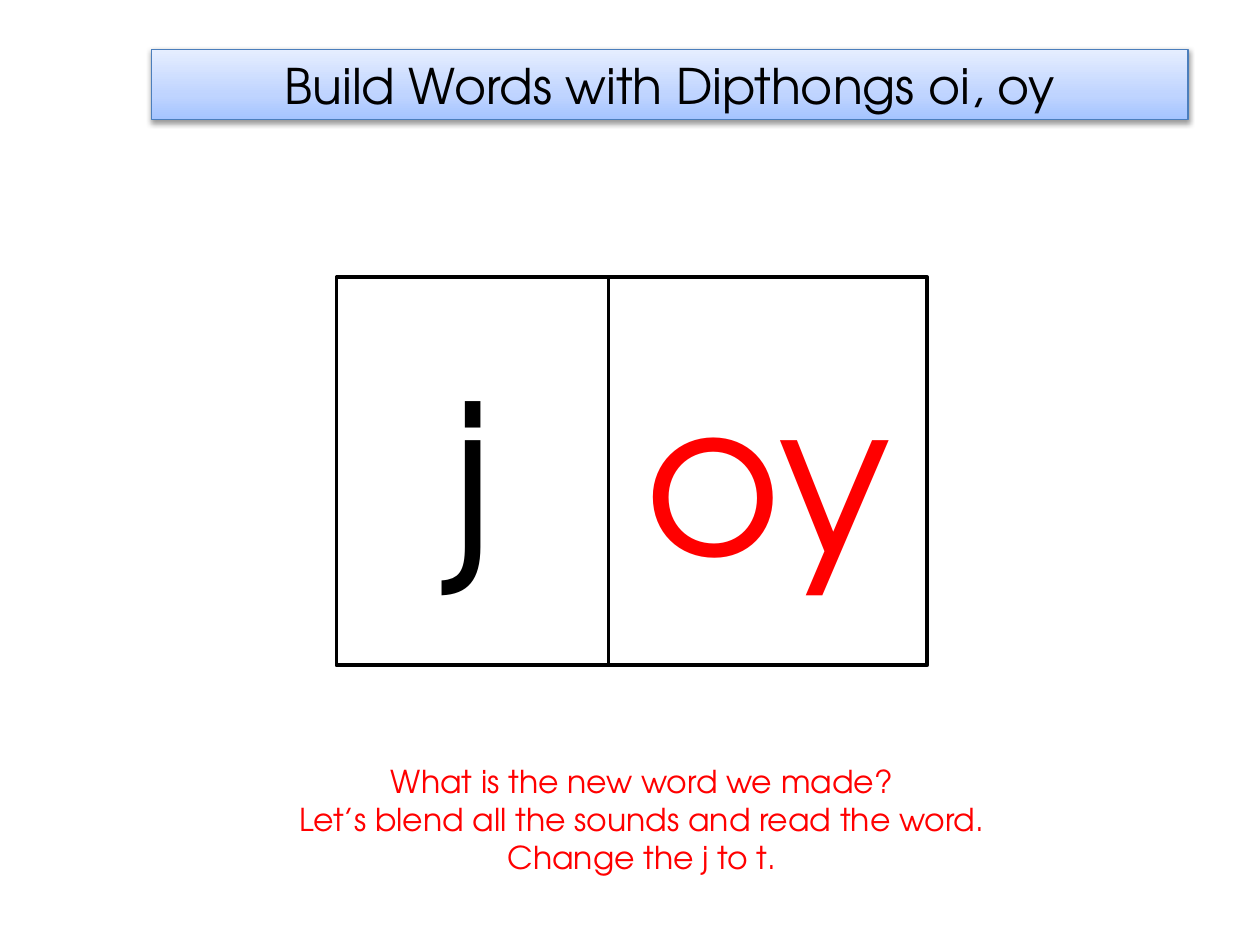
from dataclasses import dataclass

from lxml.etree import SubElement
from pptx import Presentation
from pptx.dml.color import RGBColor
from pptx.enum.shapes import MSO_SHAPE as Shape
from pptx.enum.text import MSO_ANCHOR as Anchor, MSO_AUTO_SIZE as AutoSize, PP_ALIGN as Align
from pptx.oxml import parse_xml
from pptx.oxml.ns import nsdecls, qn
from pptx.util import Inches, Pt

FONT = "TeX Gyre Adventor"
BLACK, WHITE, RED = "000000", "FFFFFF", "FF0000"
CARD_LEFT, CARD_TOP, CARD_HEIGHT = 2.67, 2.2, 3.08


@dataclass
class LetterCard:
    letters: str
    width: float
    color: str


CARDS = [LetterCard("j", 2.16, BLACK), LetterCard("oy", 2.53, RED)]
PROMPTS = [
    "What is the new word we made?",
    "Let’s blend all the sounds and read the word.",
    "Change the j to t.",
]
TITLE_STOPS = [(0, "A4C4FF"), (35, "BFD4FF"), (100, "E6EEFF")]


def rgb(color: str) -> RGBColor:
    return RGBColor.from_string(color)


def write(frame, lines: list[str], size: float, color: str, anchor=Anchor.MIDDLE) -> None:
    """Fill a text frame with centred lines in one style."""
    frame.word_wrap = True
    frame.vertical_anchor = anchor
    frame.text = "\n".join(lines)
    for paragraph in frame.paragraphs:
        paragraph.alignment = Align.CENTER
        paragraph.font.name = FONT
        paragraph.font.size = Pt(size)
        paragraph.font.color.rgb = rgb(color)


def outline(shape, color: str, width: float) -> None:
    shape.line.color.rgb = rgb(color)
    shape.line.width = Pt(width)


def add_gradient(properties, stops: list[tuple[int, str]], angle: int) -> None:
    gradient = SubElement(properties, qn("a:gradFill"), rotWithShape="1")
    stop_list = SubElement(gradient, qn("a:gsLst"))
    for position, color in stops:
        stop = SubElement(stop_list, qn("a:gs"), pos=str(position * 1000))
        SubElement(stop, qn("a:srgbClr"), val=color)
    SubElement(gradient, qn("a:lin"), ang=str(angle * 60000), scaled="0")


def add_drop_shadow(properties) -> None:
    properties.append(parse_xml(
        f'<a:effectLst {nsdecls("a")}>'
        f'<a:outerShdw blurRad="{Pt(3.1)}" dist="{Pt(1.6)}" dir="5400000" rotWithShape="0">'
        f'<a:srgbClr val="{BLACK}"><a:alpha val="38000"/></a:srgbClr>'
        '</a:outerShdw></a:effectLst>'
    ))


def format_title(title, text: str) -> None:
    title.left, title.top = Inches(1.2), Inches(0.39)
    title.width, title.height = Inches(8.23), Inches(0.56)
    add_gradient(title._element.spPr, TITLE_STOPS, 270)
    outline(title, "4B7EBC", 0.75)
    add_drop_shadow(title._element.spPr)
    write(title.text_frame, [text], 28, BLACK)
    title.text_frame.auto_size = AutoSize.NONE


def draw_card(slide, card: LetterCard, left: float) -> None:
    box = slide.shapes.add_shape(
        Shape.RECTANGLE, Inches(left), Inches(CARD_TOP), Inches(card.width), Inches(CARD_HEIGHT))
    box.shadow.inherit = False
    box.fill.solid()
    box.fill.fore_color.rgb = rgb(WHITE)
    outline(box, BLACK, 2)
    write(box.text_frame, [card.letters], 120, card.color)


def main() -> None:
    deck = Presentation()
    deck.slide_width, deck.slide_height = Inches(10), Inches(7.5)
    slide = deck.slides.add_slide(deck.slide_layouts.get_by_name("Title Only"))

    # Title banner
    format_title(slide.shapes.title, "Build Words with Dipthongs oi, oy")

    # Letter cards, side by side
    left = CARD_LEFT
    for card in CARDS:
        draw_card(slide, card, left)
        left += card.width

    # Teacher prompts
    prompts = slide.shapes.add_textbox(Inches(1.61), Inches(6), Inches(6.97), Inches(1.01))
    write(prompts.text_frame, PROMPTS, 18, RED, Anchor.TOP)
    prompts.text_frame.auto_size = AutoSize.SHAPE_TO_FIT_TEXT

    deck.save("out.pptx")


if __name__ == "__main__":
    main()
